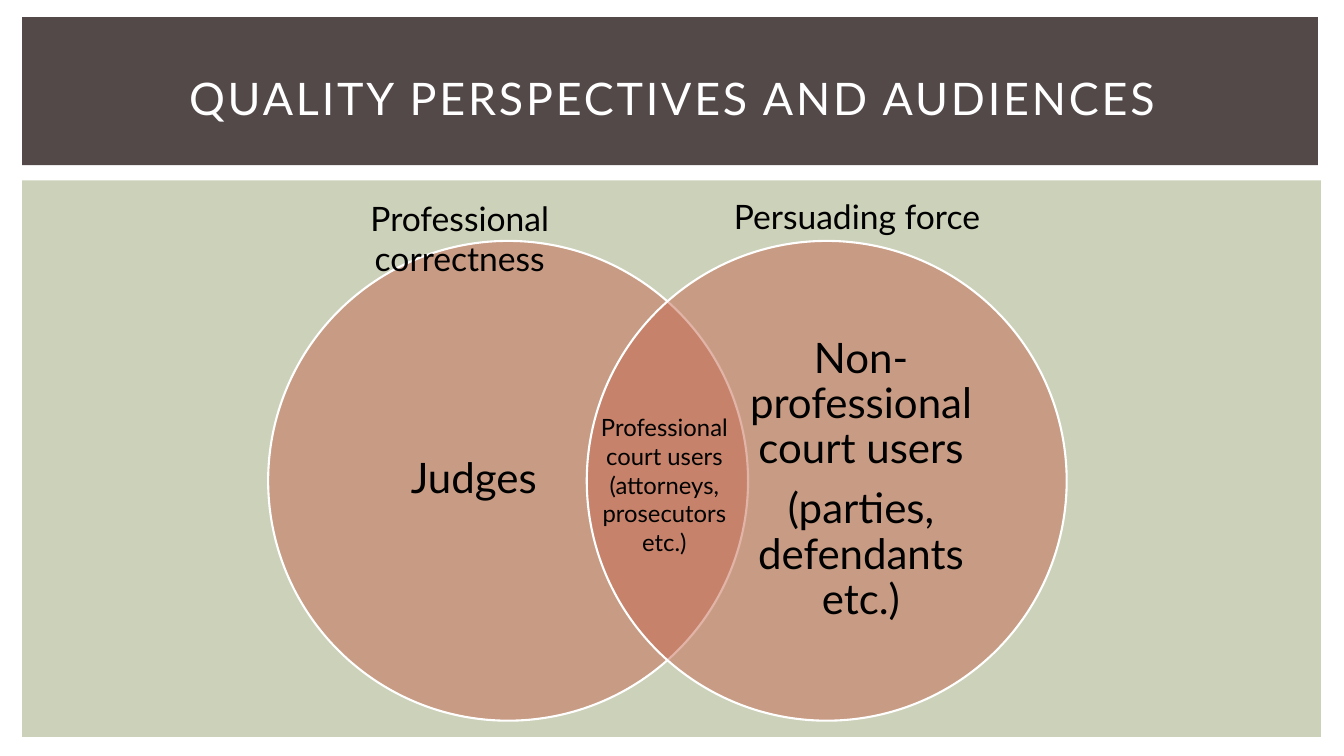
from dataclasses import dataclass

import lxml.etree
import pptx
import pptx.dml.color
import pptx.enum.shapes
import pptx.enum.text
import pptx.oxml.ns
import pptx.shapes.autoshape
import pptx.slide
import pptx.util

Inches = pptx.util.Inches
Shapes = pptx.enum.shapes.MSO_SHAPE
Anchor = pptx.enum.text.MSO_ANCHOR


@dataclass(frozen=True)
class Theme:
    font: str = "Lato"
    white: str = "FFFFFF"
    black: str = "000000"
    panel: str = "CCD1B9"
    banner: str = "534949"
    circle: str = "C66951"
    circle_opacity: int = 50
    title_size: int = 32
    circle_size: int = 30
    heading_size: int = 24
    overlap_size: int = 17


@dataclass(frozen=True)
class Box:
    left: float
    top: float
    width: float
    height: float

    def lengths(self) -> list[int]:
        return [Inches(value) for value in (self.left, self.top, self.width, self.height)]


@dataclass(frozen=True)
class Label:
    box: Box
    text: str
    size: int
    color: str
    anchor: Anchor = Anchor.TOP
    margins: tuple[float, float] = (0.1, 0.05)
    line_spacing: float = 1.0
    space_after: float = 0
    letter_spacing: float = 0


@dataclass(frozen=True)
class Audience:
    circle_left: float
    text_left: float
    text: str


THEME = Theme()
PANEL = Box(0.22, 1.79, 12.88, 5.52)
BANNER = Box(0.22, 0.17, 12.85, 1.47)
CIRCLE_TOP, CIRCLE_DIAMETER = 2.39, 4.76

AUDIENCES = [
    Audience(2.66, 3.33, "Judges"),
    Audience(5.82, 7.17, "Non-professional court users\n(parties, defendants etc.)"),
]
TITLE = Label(Box(0.56, 0.39, 12.22, 1.15), "QUALITY PERSPECTIVES AND AUDIENCES",
              THEME.title_size, THEME.white, Anchor.MIDDLE, letter_spacing=2)
CAPTIONS = [
    Label(Box(5.81, 4.05, 1.56, 1.53),
          "Professional court users (attorneys, prosecutors etc.)",
          THEME.overlap_size, THEME.black),
    Label(Box(2.73, 1.91, 3.66, 0.5), "Professional correctness",
          THEME.heading_size, THEME.black),
    Label(Box(7, 1.89, 3, 0.5), "Persuading force", THEME.heading_size, THEME.black),
]


def rgb(color: str) -> pptx.dml.color.RGBColor:
    return pptx.dml.color.RGBColor.from_string(color)


def add_filled_shape(slide: pptx.slide.Slide, kind: Shapes, box: Box,
                     color: str) -> pptx.shapes.autoshape.Shape:
    shape = slide.shapes.add_shape(kind, *box.lengths())
    shape.shadow.inherit = False
    shape.fill.solid()
    shape.fill.fore_color.rgb = rgb(color)
    shape.line.fill.background()
    return shape


def add_circle(slide: pptx.slide.Slide, left: float) -> None:
    box = Box(left, CIRCLE_TOP, CIRCLE_DIAMETER, CIRCLE_DIAMETER)
    shape = add_filled_shape(slide, Shapes.OVAL, box, THEME.circle)
    shape.line.color.rgb = rgb(THEME.white)
    shape.line.width = pptx.util.Pt(1.5)
    # Translucent fill lets the overlap show
    qualified = pptx.oxml.ns.qn
    color = shape.fill._xPr.find(qualified("a:solidFill")).find(qualified("a:srgbClr"))
    alpha = lxml.etree.SubElement(color, qualified("a:alpha"))
    alpha.set("val", str(THEME.circle_opacity * 1000))


def add_label(slide: pptx.slide.Slide, label: Label) -> None:
    text_frame = slide.shapes.add_textbox(*label.box.lengths()).text_frame
    text_frame.word_wrap = True
    text_frame.vertical_anchor = label.anchor
    horizontal, vertical = label.margins
    text_frame.margin_left = text_frame.margin_right = Inches(horizontal)
    text_frame.margin_top = text_frame.margin_bottom = Inches(vertical)
    text_frame.text = label.text
    for paragraph in text_frame.paragraphs:
        paragraph.alignment = pptx.enum.text.PP_ALIGN.CENTER
        paragraph.line_spacing = label.line_spacing
        paragraph.space_after = pptx.util.Pt(label.space_after)
        for run in paragraph.runs:
            run.font.name = THEME.font
            run.font.size = pptx.util.Pt(label.size)
            run.font.color.rgb = rgb(label.color)
            if label.letter_spacing:
                run.font._element.set("spc", str(round(label.letter_spacing * 100)))


def main() -> None:
    presentation = pptx.Presentation()
    presentation.slide_width = Inches(13.33)
    presentation.slide_height = Inches(7.5)
    slide = presentation.slides.add_slide(presentation.slide_layouts[6])

    # Background panel and title banner
    add_filled_shape(slide, Shapes.RECTANGLE, PANEL, THEME.panel)
    add_filled_shape(slide, Shapes.RECTANGLE, BANNER, THEME.banner)
    add_label(slide, TITLE)

    # Overlapping audience circles
    for audience in AUDIENCES:
        add_circle(slide, audience.circle_left)
        add_label(slide, Label(
            Box(audience.text_left, 2.95, 2.74, 3.63), audience.text,
            THEME.circle_size, THEME.black, Anchor.MIDDLE, margins=(0, 0),
            line_spacing=0.9, space_after=0.35 * THEME.circle_size))

    # Overlap text and quality headings
    for caption in CAPTIONS:
        add_label(slide, caption)

    presentation.save("out.pptx")


if __name__ == "__main__":
    main()
